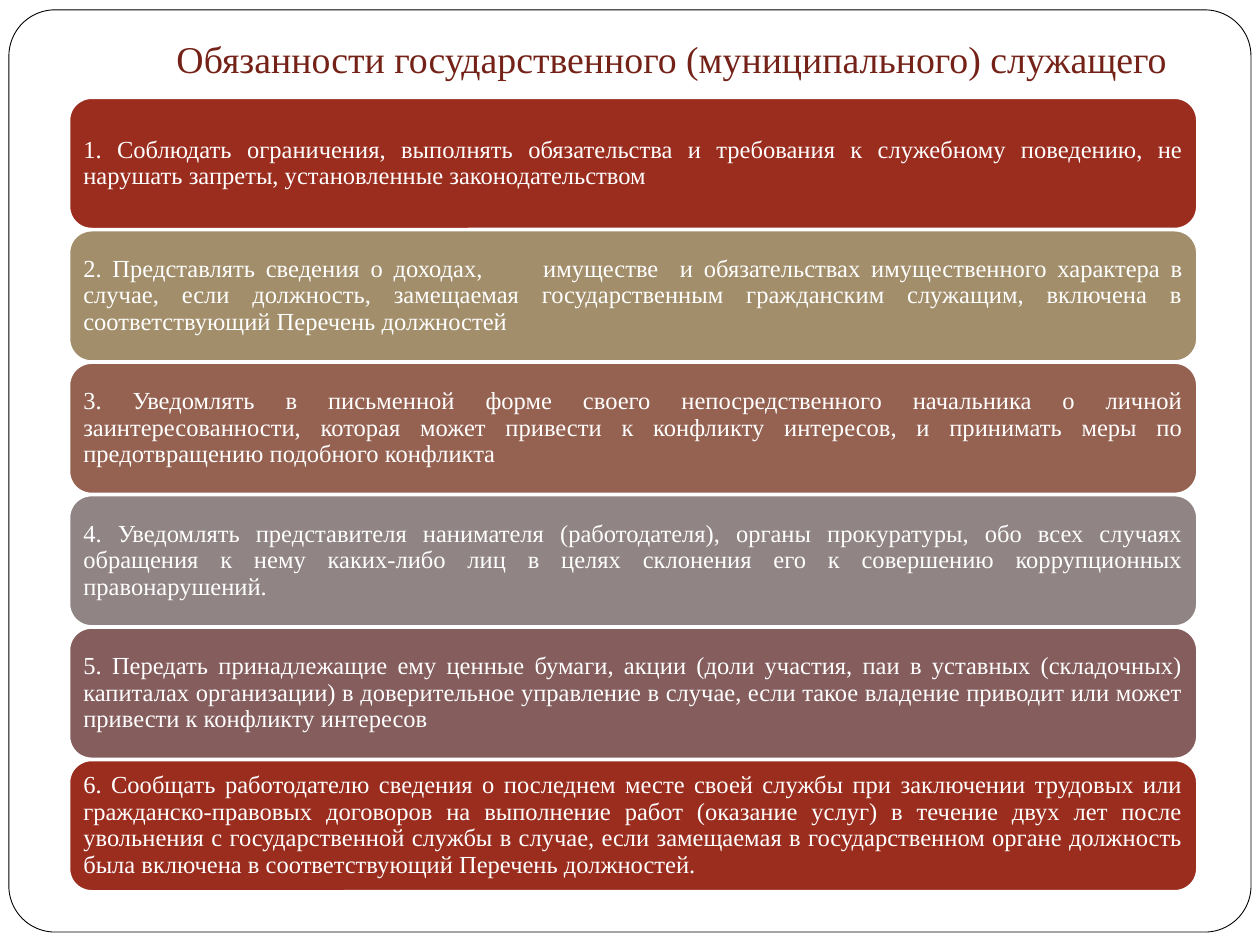
import pptx
import pptx.dml.color
import pptx.enum.shapes
import pptx.enum.text
import pptx.util

Cm = pptx.util.Cm
Pt = pptx.util.Pt
RGBColor = pptx.dml.color.RGBColor
Align = pptx.enum.text.PP_ALIGN
Anchor = pptx.enum.text.MSO_ANCHOR

WHITE = RGBColor(0xFF, 0xFF, 0xFF)
BLACK = RGBColor(0x00, 0x00, 0x00)
MAROON = RGBColor(0x74, 0x22, 0x17)
BRICK = RGBColor(0x9B, 0x2D, 0x1F)
SAND = RGBColor(0xA2, 0x8E, 0x6A)
CLAY = RGBColor(0x95, 0x62, 0x51)
GREY = RGBColor(0x91, 0x84, 0x85)
PLUM = RGBColor(0x85, 0x5D, 0x5D)

HEADING = "Обязанности государственного (муниципального) служащего"
DUTIES = [
    (BRICK, "1. Соблюдать ограничения, выполнять обязательства и требования к "
            "служебному поведению, не нарушать запреты, установленные законодательством"),
    (SAND, "2. Представлять сведения о доходах,\tимуществе  и обязательствах "
           "имущественного характера в случае, если должность, замещаемая "
           "государственным гражданским служащим, включена в соответствующий "
           "Перечень должностей"),
    (CLAY, "3. Уведомлять в письменной форме своего непосредственного начальника "
           "о личной заинтересованности, которая может привести к конфликту "
           "интересов, и принимать меры по предотвращению подобного конфликта"),
    (GREY, "4. Уведомлять представителя нанимателя (работодателя), органы "
           "прокуратуры, обо всех случаях обращения к нему каких-либо лиц в целях "
           "склонения его к совершению коррупционных правонарушений."),
    (PLUM, "5. Передать принадлежащие ему ценные бумаги, акции (доли участия, паи "
           "в уставных (складочных) капиталах организации) в доверительное "
           "управление в случае, если такое владение приводит или может привести "
           "к конфликту интересов"),
    (BRICK, "6. Сообщать работодателю сведения о последнем месте своей службы при "
            "заключении трудовых или гражданско-правовых договоров на выполнение "
            "работ (оказание услуг) в течение двух лет после увольнения с "
            "государственной службы в случае, если замещаемая в государственном "
            "органе должность была включена в соответствующий Перечень должностей."),
]

HEADING_FORMAT = {
    "frame": {"word_wrap": True, "vertical_anchor": Anchor.BOTTOM,
              "margin_left": Cm(0.25), "margin_right": Cm(0.25),
              "margin_top": Cm(0.13), "margin_bottom": Cm(0.25)},
    "paragraph": {"alignment": Align.CENTER},
    "font": {"name": "Times New Roman", "size": Pt(21.6)},
}
DUTY_FORMAT = {
    "frame": {"word_wrap": True, "vertical_anchor": Anchor.MIDDLE,
              "margin_left": Cm(0.15), "margin_right": Cm(0.15),
              "margin_top": Cm(0.15), "margin_bottom": Cm(0.15)},
    "paragraph": {"alignment": Align.JUSTIFY, "line_spacing": 0.9},
    "font": {"name": "Times New Roman", "size": Pt(14)},
}

DUTY_TOP = 1.98
DUTY_PITCH = 2.67


def apply_format(target, values):
    for attribute, value in values.items():
        setattr(target, attribute, value)


def write_text(holder, wording, text_format, color):
    frame = holder.text_frame
    paragraph = frame.paragraphs[0]
    run = paragraph.add_run()
    run.text = wording
    apply_format(frame, text_format["frame"])
    apply_format(paragraph, text_format["paragraph"])
    apply_format(run.font, text_format["font"])
    run.font.color.rgb = color


def add_panel(slide, place, rounding, fill, outline, outline_width):
    panel = slide.shapes.add_shape(
        pptx.enum.shapes.MSO_SHAPE.ROUNDED_RECTANGLE, *map(Cm, place))
    panel.adjustments[0] = rounding
    panel.shadow.inherit = False
    panel.fill.solid()
    panel.fill.fore_color.rgb = fill
    panel.line.color.rgb = outline
    panel.line.width = Pt(outline_width)
    return panel


def add_heading(slide):
    heading = slide.shapes.add_textbox(Cm(2.18), Cm(0.58), Cm(22.73), Cm(1.3))
    write_text(heading, HEADING, HEADING_FORMAT, MAROON)


def add_duty(slide, position, fill, wording):
    place = (1.4, DUTY_TOP + position * DUTY_PITCH, 22.73, 2.63)
    duty = add_panel(slide, place, 0.17, fill, WHITE, 1)
    write_text(duty, wording, DUTY_FORMAT, WHITE)


def main():
    deck = pptx.Presentation()
    deck.slide_width, deck.slide_height = Cm(25.4), Cm(19.05)
    slide = deck.slides.add_slide(deck.slide_layouts[6])
    add_panel(slide, (0.18, 0.2, 25.04, 18.59), 0.05, WHITE, BLACK, 0.5)
    add_heading(slide)
    for position, (fill, wording) in enumerate(DUTIES):
        add_duty(slide, position, fill, wording)
    deck.save("out.pptx")


if __name__ == "__main__":
    main()
